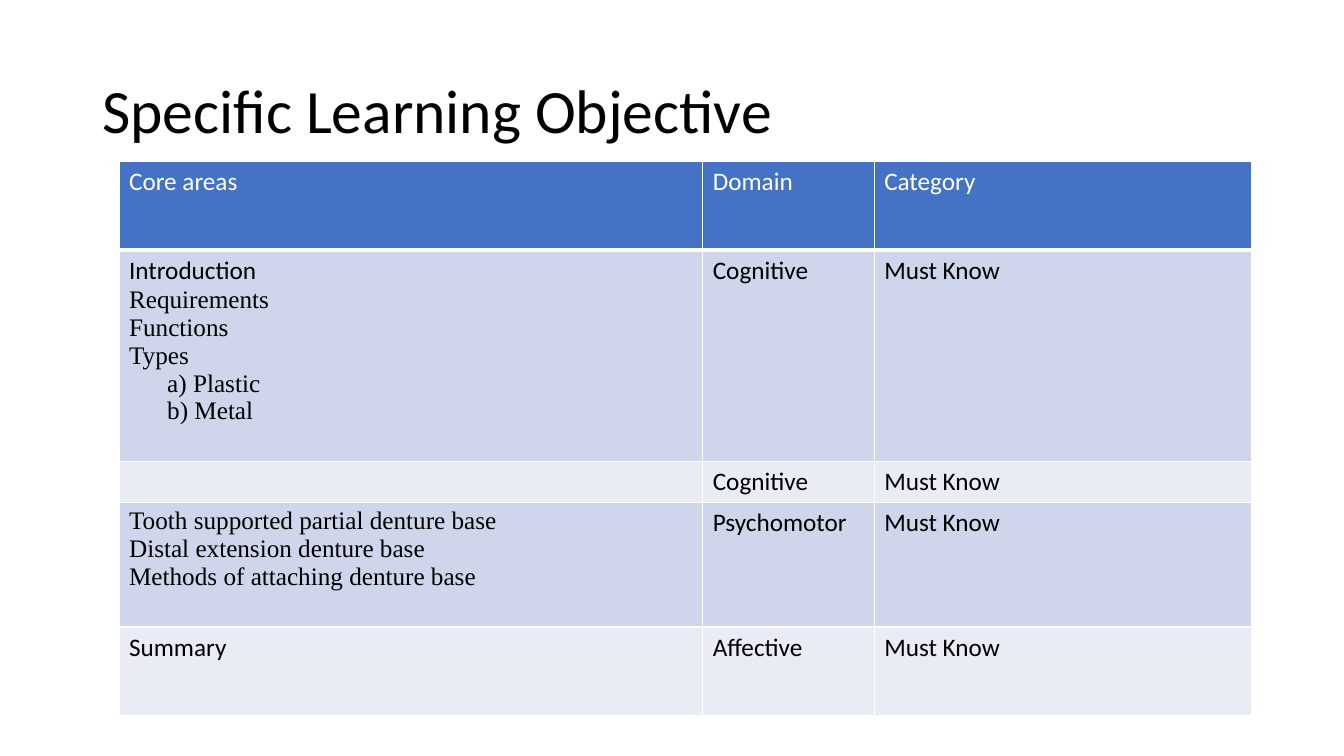
import pptx
import pptx.dml.color
import pptx.enum.text
import pptx.oxml
import pptx.oxml.ns
import pptx.util
from pptx.util import Cm, Pt

COLORS = {
    "text": "000000",
    "white": "FFFFFF",
    "header": "4472C4",
    "odd": "CFD5EA",
    "even": "E9EBF5",
}
SERIF = "Times New Roman"


def write(p, text, size=18, font="Calibri", color="text", indent=0):
    r = p.add_run()
    r.text = text
    r.font.size = Pt(size)
    r.font.name = font
    r.font.bold = False
    r.font.color.rgb = pptx.dml.color.RGBColor.from_string(COLORS[color])
    if indent:
        p._p.get_or_add_pPr().set("marL", str(Cm(indent)))


def add_borders(cell, bottom):
    sides = {"lnL": 1, "lnR": 1, "lnT": 1, "lnB": bottom}
    for i, (side, width) in enumerate(sides.items()):
        ln = pptx.oxml.parse_xml(
            f'<a:{side} {pptx.oxml.ns.nsdecls("a")} w="{Pt(width)}"><a:solidFill>'
            f'<a:srgbClr val="{COLORS["white"]}"/></a:solidFill></a:{side}>'
        )
        cell._tc.get_or_add_tcPr().insert(i, ln)


prs = pptx.Presentation()
prs.slide_width, prs.slide_height = Cm(33.87), Cm(19.05)
s = prs.slides.add_slide(prs.slide_layouts[6])

title = s.shapes.add_textbox(Cm(2.33), Cm(1.02), Cm(29.21), Cm(3.68))
tf = title.text_frame
tf.word_wrap = True
tf.vertical_anchor = pptx.enum.text.MSO_ANCHOR.MIDDLE
tf.paragraphs[0].line_spacing = 0.9
write(tf.paragraphs[0], "Specific Learning Objective", size=44)

serif = {"font": SERIF}
item = {"font": SERIF, "indent": 0.96}
rows = [
    ([("Core areas", {})], "Domain", "Category"),
    ([("Introduction", {}), ("Requirements", serif), ("Functions", serif),
      ("Types", serif), ("a) Plastic", item), ("b) Metal", item)],
     "Cognitive", "Must Know"),
    ([], "Cognitive", "Must Know"),
    ([("Tooth supported partial denture base", serif),
      ("Distal extension denture base", serif),
      ("Methods of attaching denture base", serif)],
     "Psychomotor", "Must Know"),
    ([("Summary", {})], "Affective", "Must Know"),
]
widths = [14.71, 4.32, 9.5]
heights = [2.23, 5.33, 1.03, 3.14, 2.23]

table = s.shapes.add_table(
    len(rows), len(widths), Cm(3), Cm(4.07), Cm(sum(widths)), Cm(sum(heights))
).table
for column, width in zip(table.columns, widths):
    column.width = Cm(width)

for i, (areas, domain, category) in enumerate(rows):
    table.rows[i].height = Cm(heights[i])
    fill = "header" if i == 0 else "odd" if i % 2 else "even"
    color = "white" if i == 0 else "text"
    for j, lines in enumerate([areas, [(domain, {})], [(category, {})]]):
        cell = table.cell(i, j)
        cell.fill.solid()
        cell.fill.fore_color.rgb = pptx.dml.color.RGBColor.from_string(COLORS[fill])
        add_borders(cell, bottom=3 if i == 0 else 1)
        tf = cell.text_frame
        for k, (text, style) in enumerate(lines):
            p = tf.add_paragraph() if k else tf.paragraphs[0]
            write(p, text, color=color, **style)

prs.save("out.pptx")
